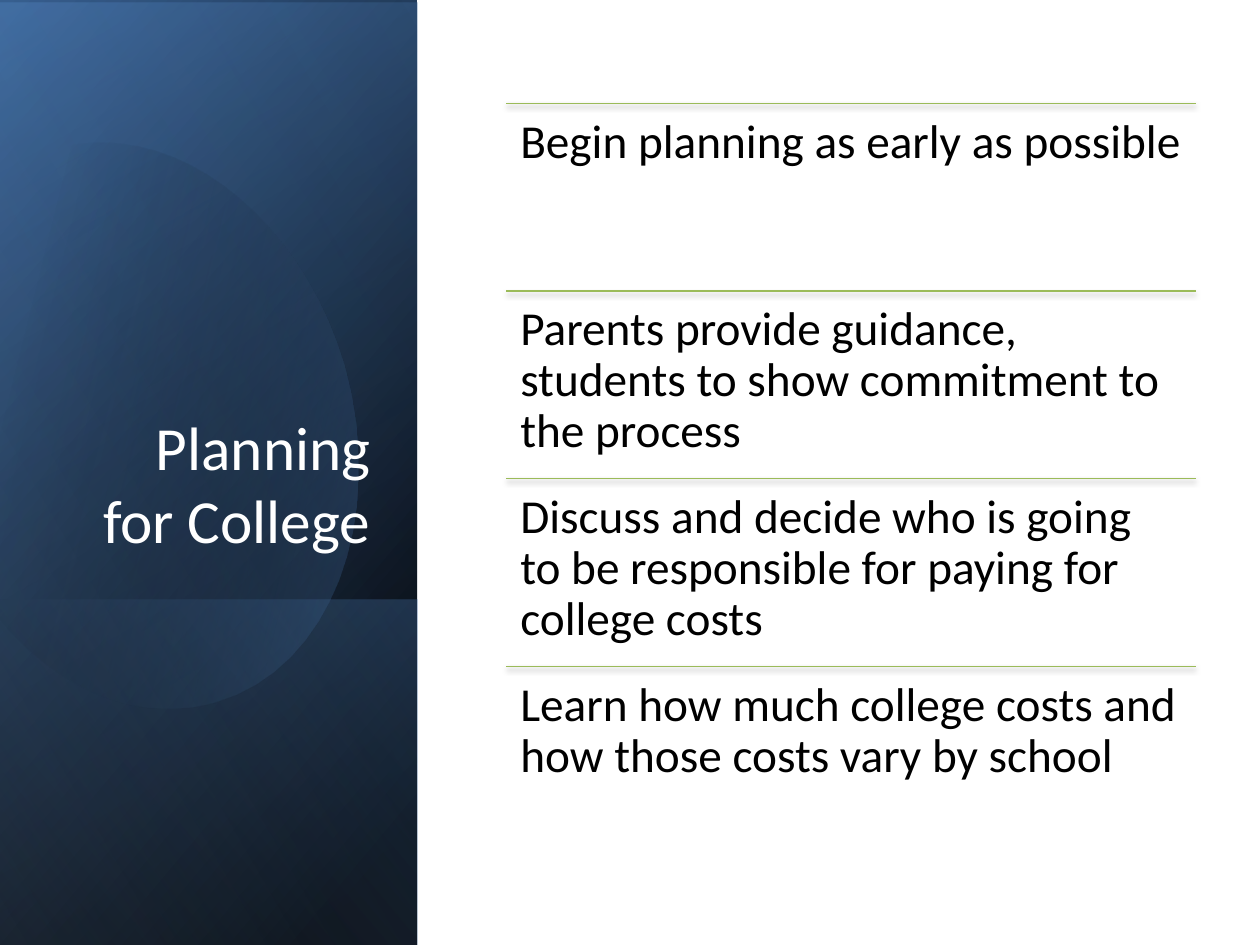
from math import cos, radians, sin

from lxml.etree import SubElement
from pptx import Presentation
from pptx.dml.color import RGBColor
from pptx.enum.shapes import MSO_CONNECTOR, MSO_SHAPE
from pptx.enum.text import MSO_ANCHOR, PP_ALIGN
from pptx.oxml.ns import qn
from pptx.util import Inches, Pt

BLACK = RGBColor(0x00, 0x00, 0x00)
WHITE = RGBColor(0xFF, 0xFF, 0xFF)
NAVY = RGBColor(0x37, 0x60, 0x92)
BLUE = RGBColor(0x4F, 0x81, 0xBD)
PALE_BLUE = RGBColor(0x95, 0xB3, 0xD7)
GREEN = RGBColor(0x9B, 0xBB, 0x59)

COLUMNS, ROWS = 100, 75
PANEL_WIDTH = 33.1
LIST_LEFT, LIST_TOP, LIST_WIDTH, ITEM_HEIGHT = 40.2, 8.2, 54.7, 14.9
ITEMS = [
    "Begin planning as early as possible",
    "Parents provide guidance, students to show commitment to the process",
    "Discuss and decide who is going to be responsible for paying for college costs",
    "Learn how much college costs and how those costs vary by school",
]

OVAL_TILT = 343.9
OVAL_CENTER = (11.9, 33.45)
OVAL_START = (9.6, 11.4)
OVAL_CURVES = [
    [(17.1, 12.2), (24.4, 19.2), (27.3, 29)],
    [(30.7, 41.2), (26.2, 53.1), (17.1, 55.7)],
    [(11.4, 57.4), (5.3, 55), (0.7, 50)],
    [(-0.3, 48.8)],
    [(-2.5, 16.6)],
    [(-1.5, 15.4)],
    [(0.2, 13.7), (2.2, 12.5), (4.5, 11.8)],
    [(6.2, 11.3), (7.9, 11.2), (9.6, 11.4)],
]


def write(box, text, size, color, font="Calibri", align=PP_ALIGN.LEFT,
          anchor=MSO_ANCHOR.TOP, inset=0.1, spacing=None):
    frame = box.text_frame
    frame.word_wrap = True
    frame.vertical_anchor = anchor
    frame.margin_left = frame.margin_right = Inches(inset)
    frame.margin_top = frame.margin_bottom = Inches(min(inset, 0.11) if spacing else 0.05)
    para = frame.paragraphs[0]
    para.alignment = align
    para.line_spacing = spacing
    span = para.add_run()
    span.text = text
    span.font.name = font
    span.font.size = Pt(size)
    span.font.color.rgb = color


def curve_points(start, curves, steps=16):
    points = [start]
    for curve in curves:
        if len(curve) == 1:
            points += curve
            continue
        corners = [points[-1], *curve]
        for step in range(1, steps + 1):
            t = step / steps
            weights = ((1 - t) ** 3, 3 * t * (1 - t) ** 2, 3 * t * t * (1 - t), t ** 3)
            points.append(tuple(sum(w * corner[axis] for w, corner in zip(weights, corners))
                                for axis in (0, 1)))
    return points


def turn(point, center, degrees):
    dx, dy = point[0] - center[0], point[1] - center[1]
    cosine, sine = cos(radians(degrees)), sin(radians(degrees))
    return center[0] + dx * cosine - dy * sine, center[1] + dx * sine + dy * cosine


class SlideBuilder:
    def __init__(self, deck):
        self.slide = deck.slides.add_slide(deck.slide_layouts[6])
        self.column = deck.slide_width / COLUMNS
        self.row = deck.slide_height / ROWS

    def place(self, left, top, width, height):
        return (round(left * self.column), round(top * self.row),
                round(width * self.column), round(height * self.row))

    def shade(self, shape, stops, angle):
        shape.shadow.inherit = False
        shape.line.fill.background()
        shape.fill.gradient()
        shape.fill.gradient_angle = (360 - angle) % 360
        for stop, (position, color, opacity) in zip(shape.fill.gradient_stops, stops):
            stop.position = position / 100
            stop.color.rgb = color
        for node, (_, _, opacity) in zip(shape._element.iter(qn("a:srgbClr")), stops):
            if opacity < 100:
                SubElement(node, qn("a:alpha"), val=str(opacity * 1000))

    def panel(self, top, height, stops, angle):
        left = (PANEL_WIDTH - height) / 2
        middle = top + height / 2
        shape = self.slide.shapes.add_shape(
            MSO_SHAPE.RECTANGLE,
            *self.place(left, middle - PANEL_WIDTH / 2, height, PANEL_WIDTH))
        shape.rotation = 90
        shape._element.spPr.find(qn("a:xfrm")).set("flipH", "1")
        self.shade(shape, stops, angle)

    def oval(self, stops, angle):
        points = [turn(point, OVAL_CENTER, -OVAL_TILT)
                  for point in curve_points(OVAL_START, OVAL_CURVES)]
        cells = [(round(x * self.column), round(y * self.row)) for x, y in points]
        builder = self.slide.shapes.build_freeform(*cells[0])
        builder.add_line_segments(cells[1:], close=True)
        shape = builder.convert_to_shape()
        shape.rotation = OVAL_TILT
        self.shade(shape, stops, angle)

    def text(self, shapes, area, text, **style):
        write(shapes.add_textbox(*self.place(*area)), text, **style)

    def rule(self, shapes, left, top, width):
        x, y, length, _ = self.place(left, top, width, 0)
        line = shapes.add_connector(MSO_CONNECTOR.STRAIGHT, x, y, x + length, y)
        line.line.color.rgb = GREEN
        line.line.width = Pt(0.75)
        effects = SubElement(line._element.spPr, qn("a:effectLst"))
        shadow = SubElement(effects, qn("a:outerShdw"), blurRad=str(Pt(3.1)),
                            dist=str(Pt(1.8)), dir="5400000", rotWithShape="0")
        color = SubElement(shadow, qn("a:srgbClr"), val=str(BLACK))
        SubElement(color, qn("a:alpha"), val="35000")

    def ruled_list(self, items):
        group = self.slide.shapes.add_group_shape()
        for index, item in enumerate(items):
            top = LIST_TOP + index * ITEM_HEIGHT
            self.rule(group.shapes, LIST_LEFT, top, LIST_WIDTH)
            self.text(group.shapes, (LIST_LEFT, top, LIST_WIDTH, ITEM_HEIGHT), item,
                      size=27, color=BLACK, inset=0.11, spacing=0.9)


def main():
    deck = Presentation()
    deck.slide_width, deck.slide_height = Inches(10), Inches(7.5)
    builder = SlideBuilder(deck)
    builder.panel(0, ROWS, [(8, BLACK, 100), (100, NAVY, 100)], 50)
    builder.panel(0.2, ROWS, [(0, BLACK, 0), (99, BLUE, 46)], 30)
    builder.panel(47.6, 27.4, [(2, BLUE, 29), (100, BLACK, 30)], 130)
    builder.oval([(29, BLACK, 0), (100, BLUE, 43)], 30)
    builder.panel(0, ROWS, [(0, BLACK, 0), (99, PALE_BLUE, 11)], 120)
    builder.text(builder.slide.shapes, (4.8, 18.4, 25.6, 26.2), "Planning for College",
                 size=35, color=WHITE, align=PP_ALIGN.RIGHT, anchor=MSO_ANCHOR.BOTTOM)
    builder.ruled_list(ITEMS)
    deck.save("out.pptx")


if __name__ == "__main__":
    main()
